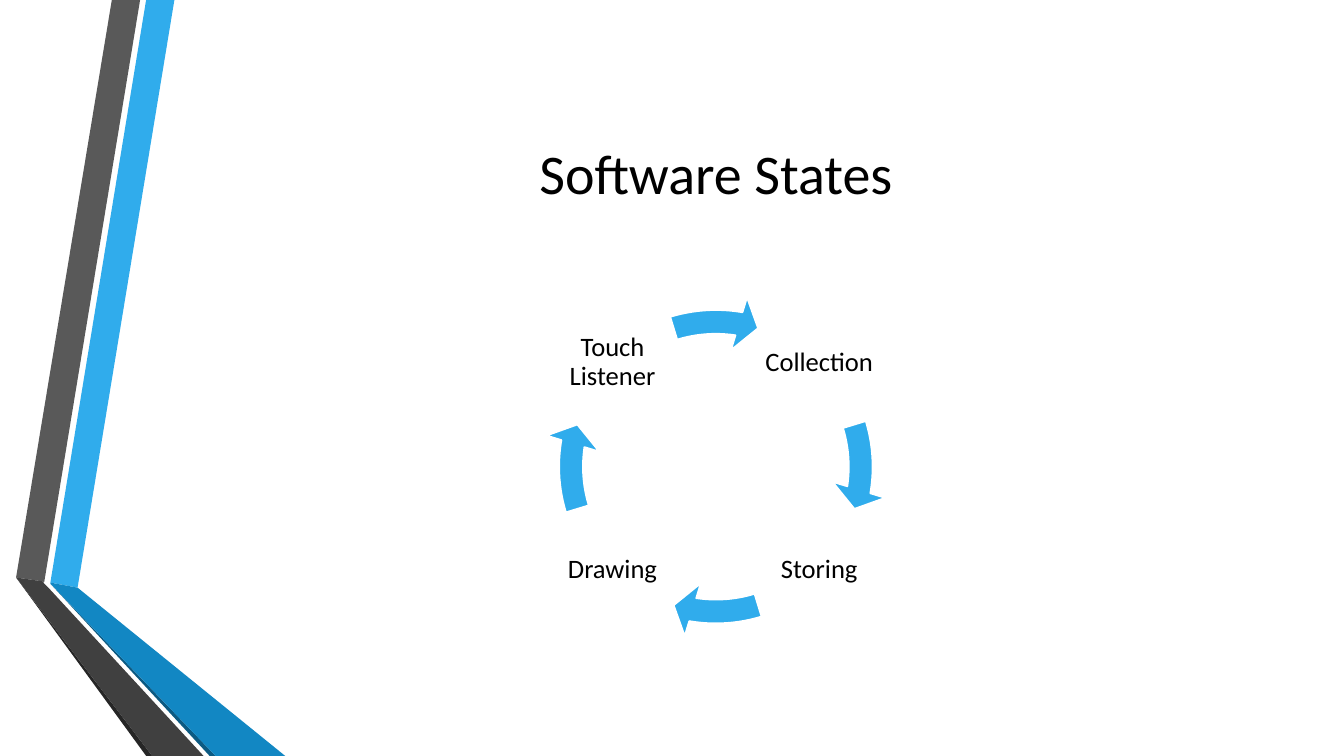
from pptx import Presentation
from pptx import util as u
from pptx.dml.color import RGBColor
from pptx.enum import shapes, text

PX = 9144
theme = dict(font="Calibri", ink="000000", blue="30ACEC", edge="FFFFFF",
             gray="595959", dark="262626", navy="0C5A82", deep="1287C3",
             coal="404040", title=40, label=19)


def paint(shape, color):
    shape.shadow.inherit = False
    shape.fill.solid()
    shape.fill.fore_color.rgb = RGBColor.from_string(theme[color])
    shape.line.fill.background()


def write(words, box, size, inset, space):
    frame = slide.shapes.add_textbox(*[n * PX for n in box]).text_frame
    sides = ("left", "top", "right", "bottom")
    form = {f"margin_{side}": inset * PX for side in sides}
    form.update(word_wrap=True, vertical_anchor=text.MSO_ANCHOR.MIDDLE)
    for key, value in form.items():
        setattr(frame, key, value)
    para = frame.paragraphs[0]
    para.text = words
    para.alignment = text.PP_ALIGN.CENTER
    para.line_spacing = space
    font = para.runs[0].font
    font.name = theme["font"]
    font.size = u.Pt(theme[size])
    font.color.rgb = RGBColor.from_string(theme["ink"])


deck = Presentation()
deck.slide_width = 1333 * PX
deck.slide_height = 750 * PX
slide = deck.slides.add_slide(deck.slide_layouts[6])

bands = [
    ("blue", [(50, 578), (77, 583), (173, 0), (145, 0)]),
    ("gray", [(139, 0), (111, 0), (16, 573), (44, 577)]),
    ("dark", [(16, 573), (145, 750), (151, 750)]),
    ("navy", [(50, 579), (208, 750), (214, 750)]),
    ("deep", [(50, 579), (214, 750), (283, 750), (77, 583), (50, 578)]),
    ("coal", [(202, 750), (48, 583), (43, 578), (44, 577), (16, 573), (151, 750)]),
]
for color, dots in bands:
    pen = slide.shapes.build_freeform(*dots[0], scale=PX)
    pen.add_line_segments(dots[1:], close=True)
    paint(pen.convert_to_shape(), color)

write("Software States", (162, 75, 1096, 192), "title", 5, 1)

states = [("Collection", 752, 299), ("Storing", 752, 505),
          ("Drawing", 547, 505), ("Touch Listener", 547, 299)]
for step, (name, left, top) in enumerate(states):
    write(name, (left, top, 121, 121), "label", 3, 0.9)
    arrow = slide.shapes.add_shape(shapes.MSO_SHAPE.CIRCULAR_ARROW,
                                   539 * PX, 292 * PX, 342 * PX, 342 * PX)
    turn = 54 * step
    bends = (0.069, 4.65, 5.509 + turn, (205.841 + turn) % 216, 0.08)
    for spot, bend in enumerate(bends):
        arrow.adjustments[spot] = bend
    paint(arrow, "blue")
    arrow.line.color.rgb = RGBColor.from_string(theme["edge"])
    arrow.line.width = u.Pt(1.25)

deck.save("out.pptx")
